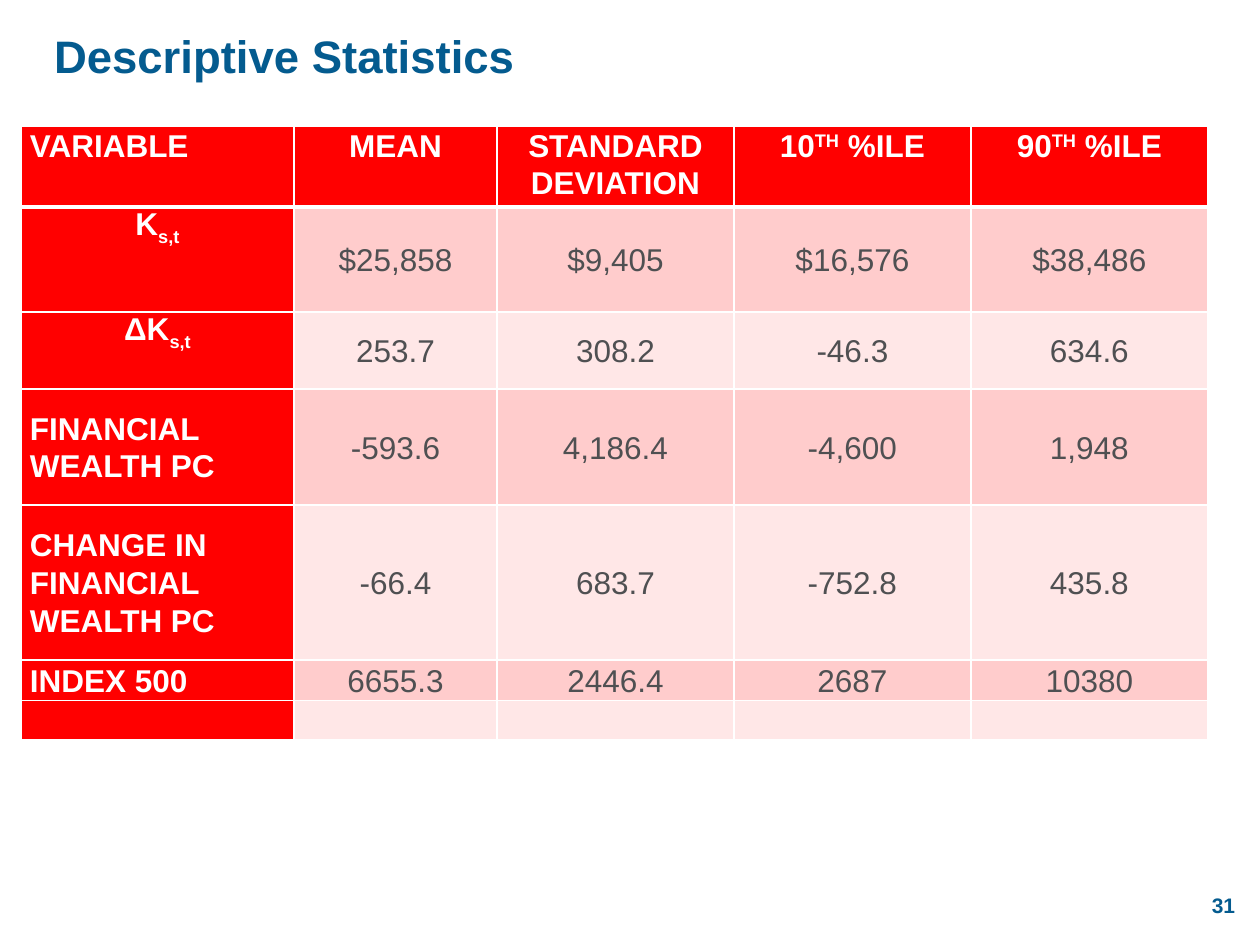
from lxml import etree
from pptx import Presentation
from pptx import util as u
from pptx.dml.color import RGBColor
from pptx.enum import text
from pptx.oxml import ns

PX = u.Inches(1) // 126
FONT = "Arial"
BLUE = RGBColor(0x04, 0x5B, 0x8F)
RED = RGBColor(0xFF, 0x00, 0x00)
PINK = RGBColor(0xFF, 0xCC, 0xCC)
PALE = RGBColor(0xFF, 0xE7, 0xE7)
GREY = RGBColor(0x4F, 0x50, 0x52)
WHITE = RGBColor(0xFF, 0xFF, 0xFF)

COLUMN_WIDTHS = [273, 203, 237, 237, 237]
ROW_HEIGHTS = [78, 105, 77, 116, 155, 39, 39]
SUPERSCRIPT, SUBSCRIPT = 30000, -25000

STATISTICS = [
    ["VARIABLE", "MEAN", "STANDARD DEVIATION",
     [("10", 0), ("TH", SUPERSCRIPT), (" %ILE", 0)],
     [("90", 0), ("TH", SUPERSCRIPT), (" %ILE", 0)]],
    [[("K", 0), ("s,t", SUBSCRIPT)], "$25,858", "$9,405", "$16,576", "$38,486"],
    [[("ΔK", 0), ("s,t", SUBSCRIPT)], "253.7", "308.2", "-46.3", "634.6"],
    ["FINANCIAL WEALTH PC", "-593.6", "4,186.4", "-4,600", "1,948"],
    ["CHANGE IN FINANCIAL WEALTH PC", "-66.4", "683.7", "-752.8", "435.8"],
    ["INDEX 500", "6655.3", "2446.4", "2687", "10380"],
    ["", "", "", "", ""],
]


def scaled(*lengths):
    return [length * PX for length in lengths]


def add_run(paragraph, words, size, color, bold=True, baseline=0):
    run = paragraph.add_run()
    run.text = words
    run.font.name = FONT
    run.font.size = u.Pt(size)
    run.font.bold = bold
    run.font.color.rgb = color
    if baseline:
        run.font._element.set("baseline", str(baseline))


def set_margins(target, left, top, right, bottom):
    target.margin_left, target.margin_top, target.margin_right, target.margin_bottom = scaled(
        left, top, right, bottom)


def add_border(cell, side, points):
    line = etree.SubElement(cell._tc.get_or_add_tcPr(), ns.qn(f"a:ln{side}"), w=str(u.Pt(points)))
    fill = etree.SubElement(line, ns.qn("a:solidFill"))
    etree.SubElement(fill, ns.qn("a:srgbClr"), val=str(WHITE))


def fill_cell(cell, content, row, column):
    is_header, is_label = row == 0, column == 0
    is_symbol = is_label and isinstance(content, list)
    for side in "LRTB":
        below_header = (side, row) in (("B", 0), ("T", 1))
        add_border(cell, side, 3 if below_header else 1)
    cell.fill.solid()
    cell.fill.fore_color.rgb = RED if is_header or is_label else PINK if row % 2 else PALE
    set_margins(cell, 9, 0, 9, 0)
    cell.vertical_anchor = text.MSO_ANCHOR.TOP if is_header or is_symbol else text.MSO_ANCHOR.MIDDLE
    paragraph = cell.text_frame.paragraphs[0]
    paragraph.alignment = text.PP_ALIGN.LEFT if is_label and not is_symbol else text.PP_ALIGN.CENTER
    if not is_symbol:
        paragraph.line_spacing = 1.07
    pieces = [(content, 0)] if isinstance(content, str) else content
    for words, baseline in pieces:
        if words:
            strong = is_header or is_label
            add_run(paragraph, words, 18, WHITE if strong else GREY, strong, baseline)


def place_title(slide, left, top, width, height):
    title = slide.shapes.title
    title.left, title.top, title.width, title.height = scaled(left, top, width, height)
    frame = title.text_frame
    frame.word_wrap = False
    frame.auto_size = text.MSO_AUTO_SIZE.NONE
    frame.vertical_anchor = text.MSO_ANCHOR.MIDDLE
    set_margins(frame, 0, 9, 0, 0)
    heading = frame.paragraphs[0]
    heading.alignment = text.PP_ALIGN.LEFT
    heading.line_spacing = u.Pt(25)
    add_run(heading, "Descriptive Statistics", 26, BLUE)


def place_statistics(slide, left, top):
    box = scaled(left, top, sum(COLUMN_WIDTHS), sum(ROW_HEIGHTS))
    statistics = slide.shapes.add_table(len(ROW_HEIGHTS), len(COLUMN_WIDTHS), *box).table
    for column, width in zip(statistics.columns, scaled(*COLUMN_WIDTHS)):
        column.width = width
    for row, height in zip(statistics.rows, scaled(*ROW_HEIGHTS)):
        row.height = height
    for row, contents in enumerate(STATISTICS):
        for column, content in enumerate(contents):
            fill_cell(statistics.cell(row, column), content, row, column)


def place_page_number(slide, left, top, width, height):
    frame = slide.shapes.add_textbox(*scaled(left, top, width, height)).text_frame
    frame.word_wrap = True
    frame.vertical_anchor = text.MSO_ANCHOR.MIDDLE
    page_number = frame.paragraphs[0]
    page_number.alignment = text.PP_ALIGN.CENTER
    add_run(page_number, "31", 12, BLUE)


def main():
    deck = Presentation()
    deck.slide_width, deck.slide_height = scaled(1260, 945)
    slide = deck.slides.add_slide(deck.slide_layouts[5])
    place_page_number(slide, 1187, 855, 73, 101)
    place_statistics(slide, 21, 126)
    place_title(slide, 54, 0, 1134, 112)
    deck.save("out.pptx")


if __name__ == "__main__":
    main()
